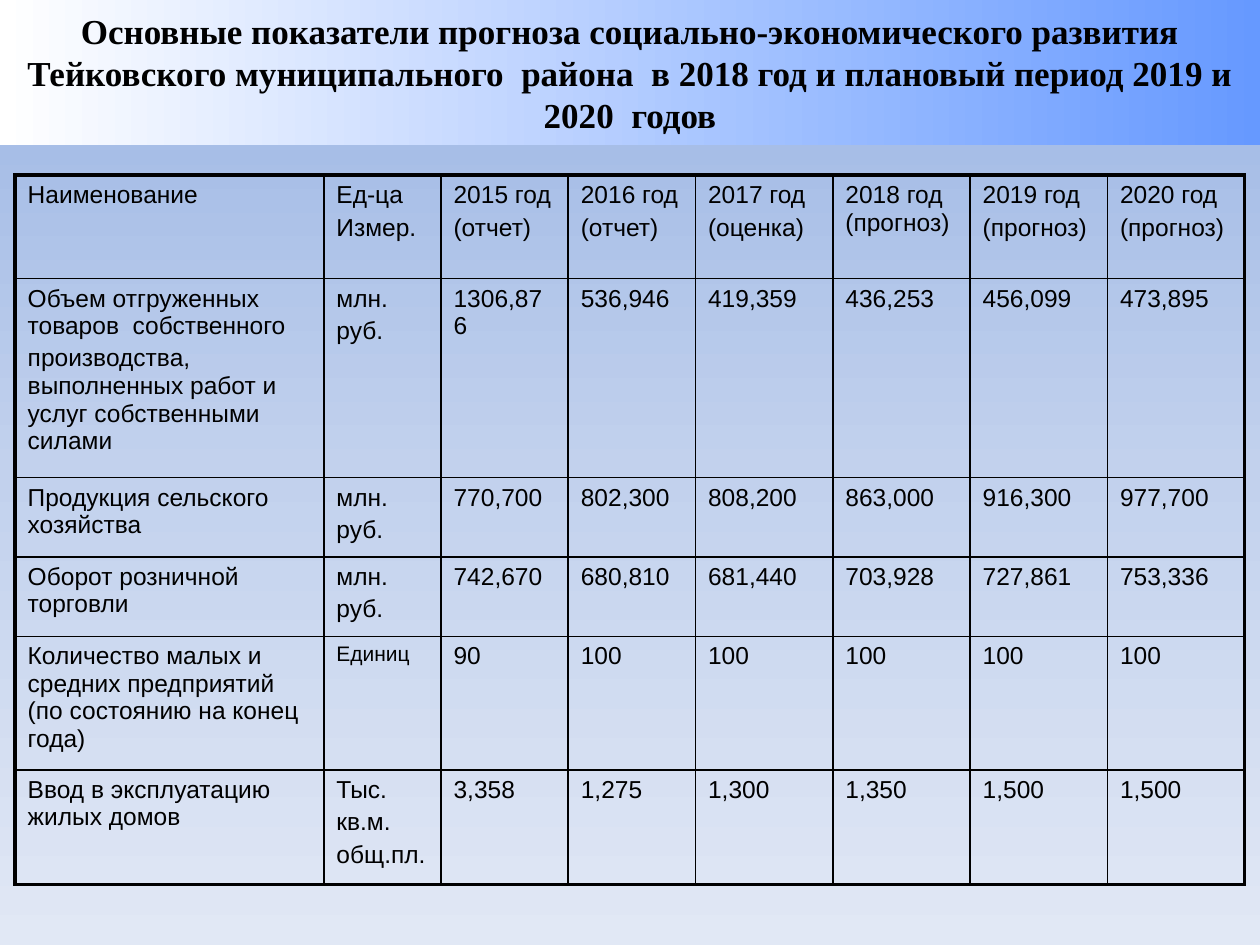
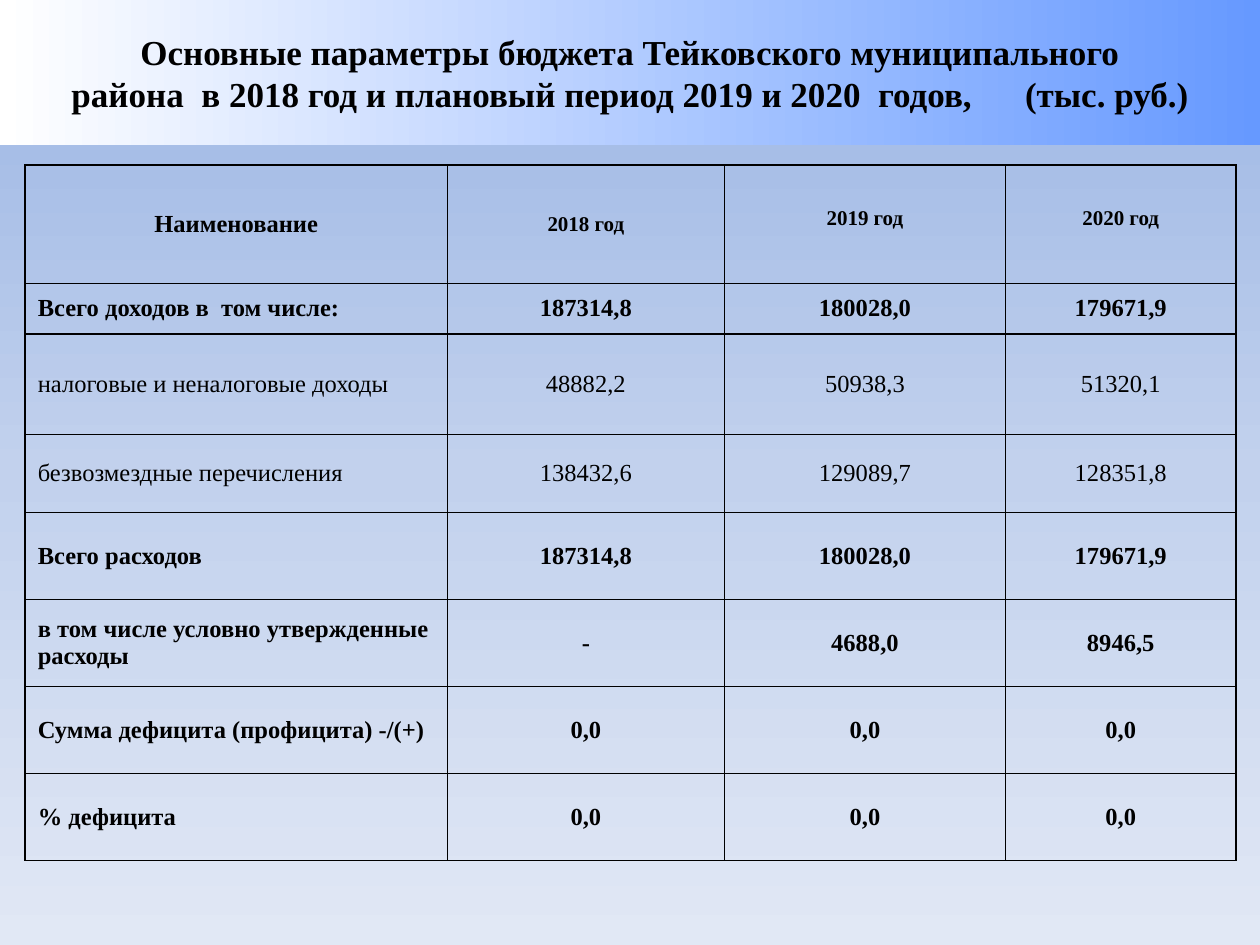
import dataclasses

import lxml.etree
import pptx
import pptx.dml.color
import pptx.enum.text
import pptx.oxml.ns
import pptx.util

Inch, Pt = pptx.util.Inches, pptx.util.Pt
qn = pptx.oxml.ns.qn
Align, Anchor = pptx.enum.text.PP_ALIGN, pptx.enum.text.MSO_ANCHOR


@dataclasses.dataclass(frozen=True)
class Theme:
    ink: str = "000000"
    sky: tuple = ((0, "9AB5E4"), (50, "C2D1ED"), (100, "E1E8F5"))
    band: tuple = ((0, "FFFFFF"), (100, "6699FF"))
    serif: str = "Times New Roman"
    sans: str = "Arial"
    head: int = 20
    text: int = 14
    small: int = 12
    thin: float = 1
    thick: float = 2.25
    gap: float = 2.8


theme = Theme()


def shade(fill, root, stops, angle):
    """Fill with a linear gradient; root is the XML element that holds the fill."""
    fill.gradient()
    fill.gradient_angle = angle
    group = root.find(".//" + qn("a:gsLst"))
    for old in list(group):
        group.remove(old)
    for share, color in stops:
        stop = lxml.etree.SubElement(group, qn("a:gs"), pos=str(share * 1000))
        lxml.etree.SubElement(stop, qn("a:srgbClr"), val=color)


def write(para, text, face, size, bold):
    run = para.add_run()
    run.text = text
    run.font.name = face
    run.font.size = Pt(size)
    run.font.bold = bold
    run.font.color.rgb = pptx.dml.color.RGBColor.from_string(theme.ink)
    return run


deck = pptx.Presentation()
deck.slide_width, deck.slide_height = Inch(10), Inch(7.5)
master = deck.slide_master
shade(master.background.fill, master.element.find(".//" + qn("p:bg")), theme.sky, 270)

# A line break inside a cell starts a new paragraph.
mln = "млн.\nруб."
growth = [
    ["Наименование", "Ед-ца\nИзмер.", "2015 год\n(отчет)", "2016 год\n(отчет)",
     "2017 год\n(оценка)", "2018 год (прогноз)", "2019 год\n(прогноз)", "2020 год\n(прогноз)"],
    ["Объем отгруженных товаров  собственного\n"
     "производства, выполненных работ и услуг собственными силами",
     mln, "1306,876", "536,946", "419,359", "436,253", "456,099", "473,895"],
    ["Продукция сельского хозяйства",
     mln, "770,700", "802,300", "808,200", "863,000", "916,300", "977,700"],
    ["Оборот розничной торговли",
     mln, "742,670", "680,810", "681,440", "703,928", "727,861", "753,336"],
    ["Количество малых и средних предприятий (по состоянию на конец года)",
     "Единиц", "90", "100", "100", "100", "100", "100"],
    ["Ввод в эксплуатацию жилых домов",
     "Тыс.\nкв.м.\nобщ.пл.", "3,358", "1,275", "1,300", "1,350", "1,500", "1,500"],
]
budget = [
    ["Наименование", "2018 год", "2019 год", "2020 год"],
    ["Всего доходов в  том числе:", "187314,8", "180028,0", "179671,9"],
    ["налоговые и неналоговые доходы", "48882,2", "50938,3", "51320,1"],
    ["безвозмездные перечисления", "138432,6", "129089,7", "128351,8"],
    ["Всего расходов", "187314,8", "180028,0", "179671,9"],
    ["в том числе условно утвержденные расходы", "-", "4688,0", "8946,5"],
    ["Сумма дефицита (профицита) -/(+)", "0,0", "0,0", "0,0"],
    ["% дефицита", "0,0", "0,0", "0,0"],
]
pages = [
    dict(title=[["Основные показатели прогноза социально-экономического развития "
                 "Тейковского муниципального  района  в 2018 год и плановый период "
                 "2019 и 2020  годов"]],
         data=growth, left=0.12, top=1.39, face=theme.sans, edge=theme.thick,
         cols=[2.45, 0.93] + [1.01] * 2 + [1.09] * 4,
         rows=[0.82, 1.58, 0.63, 0.63, 1.06, 0.91],
         center=False, plain=range(6), small=[(4, 1)], raised=[]),
    dict(title=[["Основные параметры бюджета Тейковского муниципального"],
                ["района  в 2018 год и плановый период 2019 и 2020  годов,", " ", "(тыс. руб.)"]],
         data=budget, left=0.2, top=1.31, face=theme.serif, edge=theme.thin,
         cols=[3.35, 2.2, 2.23, 1.83],
         rows=[0.94, 0.4, 0.8, 0.62] + [0.69] * 4,
         center=True, plain=[2, 3], small=[(0, 1), (0, 2), (0, 3)], raised=[(0, 2), (0, 3)]),
]

for page in pages:
    slide = deck.slides.add_slide(deck.slide_layouts.get_by_name("Title Only"))

    title = slide.shapes.title
    title.left, title.top = 0, 0
    title.width, title.height = deck.slide_width, Inch(1.15)
    shade(title.fill, title.element, theme.band, 0)
    frame = title.text_frame
    frame.word_wrap = True
    frame.auto_size = pptx.enum.text.MSO_AUTO_SIZE.NONE
    frame.vertical_anchor = Anchor.MIDDLE
    for i, line in enumerate(page["title"]):
        para = frame.add_paragraph() if i else frame.paragraphs[0]
        para.alignment = Align.CENTER
        for part in line:
            run = write(para, part, theme.serif, theme.head, True)
            if part == " ":  # one widened space sets the unit apart
                run._r.get_or_add_rPr().set("spc", "2500")

    cols, rows, data = page["cols"], page["rows"], page["data"]
    table = slide.shapes.add_table(
        len(rows), len(cols), Inch(page["left"]), Inch(page["top"]),
        Inch(sum(cols)), Inch(sum(rows))).table
    table.first_row = table.horz_banding = False
    for col, width in zip(table.columns, cols):
        col.width = Inch(width)
    for row, height in zip(table.rows, rows):
        row.height = Inch(height)

    for r, line in enumerate(data):
        for c, text in enumerate(line):
            cell = table.cell(r, c)
            cell.fill.background()
            if page["center"]:
                cell.vertical_anchor = Anchor.MIDDLE
            if (r, c) in page["raised"]:
                cell.vertical_anchor = Anchor.BOTTOM
                cell.margin_bottom = Inch(0.42)
            size = theme.small if (r, c) in page["small"] else theme.text
            for i, part in enumerate(text.split("\n")):
                para = cell.text_frame.add_paragraph() if i else cell.text_frame.paragraphs[0]
                if i:
                    para.space_before = Pt(theme.gap)
                middle = page["center"] and (r == 0 or c > 0)
                para.alignment = Align.CENTER if middle else Align.LEFT
                write(para, part, page["face"], size, r not in page["plain"])

            outer = dict(L=c == 0, R=c == len(cols) - 1, T=r == 0, B=r == len(rows) - 1)
            props = cell._tc.get_or_add_tcPr()
            for i, (side, rim) in enumerate(outer.items()):
                width = page["edge"] if rim else theme.thin
                border = lxml.etree.Element(qn("a:ln" + side), w=str(Pt(width)))
                solid = lxml.etree.SubElement(border, qn("a:solidFill"))
                lxml.etree.SubElement(solid, qn("a:srgbClr"), val=theme.ink)
                props.insert(i, border)

deck.save("out.pptx")
